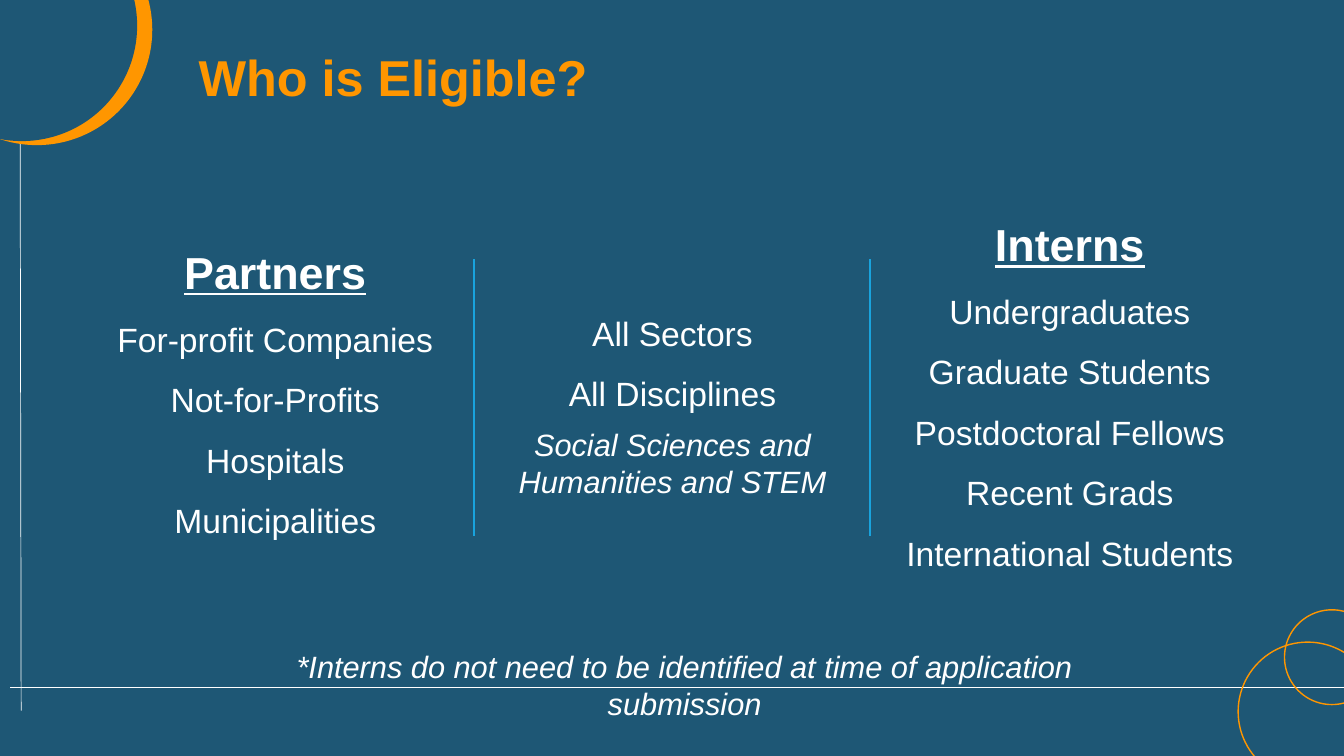
from dataclasses import dataclass

from lxml.etree import SubElement
from pptx import Presentation
from pptx.dml.color import RGBColor
from pptx.enum.shapes import MSO_CONNECTOR, MSO_SHAPE
from pptx.enum.text import MSO_ANCHOR, MSO_AUTO_SIZE, PP_ALIGN
from pptx.oxml.ns import qn
from pptx.util import Inches, Pt


@dataclass(frozen=True)
class Theme:
    font: str = "Arial"
    navy: str = "1E5775"
    orange: str = "FF9600"
    white: str = "FFFFFF"
    blue: str = "19A3DD"
    title: int = 36
    heading: int = 32
    item: int = 24
    note: int = 22


THEME = Theme()


@dataclass(frozen=True)
class Line:
    x1: float
    y1: float
    x2: float
    y2: float
    color: str
    width: float


@dataclass(frozen=True)
class Circle:
    x: float
    y: float
    size: float
    fill: str | None = None


@dataclass(frozen=True)
class Column:
    x: float
    y: float
    height: float
    items: tuple[str, ...]
    heading: str | None = None


COL_W = 3.94
LINES = (
    Line(0.1, 6.82, 13.33, 6.82, THEME.white, 0.5),
    Line(0.2, 1.36, 0.21, 7.05, THEME.white, 0.5),
    *(Line(x, 2.57, x, 5.32, THEME.blue, 1.5) for x in (4.7, 8.63)),
)
CIRCLES = (
    Circle(12.28, 6.37, 1.38),
    Circle(12.74, 6.05, 0.94),
    Circle(-0.78, -0.85, 2.29, THEME.orange),
    Circle(-0.93, -0.89, 2.29, THEME.navy),
)
PARTNERS = Column(0.76, 2.58, 2.36, (
    "For-profit Companies", "Not-for-Profits", "Hospitals", "Municipalities"), "Partners")
SCOPE = Column(4.7, 2.75, 2.36, ("All Sectors", "All Disciplines"))
INTERNS = Column(8.64, 2.42, 2.73, (
    "Undergraduates", "Graduate Students", "Postdoctoral Fellows",
    "Recent Grads", "International Students"), "Interns")


def add_line(s, line: Line) -> None:
    c = s.shapes.add_connector(
        MSO_CONNECTOR.STRAIGHT, *map(Inches, (line.x1, line.y1, line.x2, line.y2)))
    c.line.color.rgb = RGBColor.from_string(line.color)
    c.line.width = Pt(line.width)
    SubElement(c._element.spPr, qn("a:effectLst"))


def add_circle(s, circle: Circle) -> None:
    """Draw a filled disc, or an orange ring when there is no fill."""
    sp = s.shapes.add_shape(
        MSO_SHAPE.OVAL, *map(Inches, (circle.x, circle.y, circle.size, circle.size)))
    sp.shadow.inherit = False
    if circle.fill:
        sp.fill.solid()
        sp.fill.fore_color.rgb = RGBColor.from_string(circle.fill)
        sp.line.fill.background()
    else:
        sp.fill.background()
        sp.line.color.rgb = RGBColor.from_string(THEME.orange)
        sp.line.width = Pt(1)


def set_frame(sp, x: float, y: float, w: float, h: float, anchor=MSO_ANCHOR.MIDDLE):
    """Place a text shape and return its wrapped text frame."""
    sp.left, sp.top, sp.width, sp.height = map(Inches, (x, y, w, h))
    tf = sp.text_frame
    tf.word_wrap = True
    tf.auto_size = MSO_AUTO_SIZE.NONE
    tf.vertical_anchor = anchor
    return tf


def add_text(tf, text: str, *, size: int = THEME.item, color: str = THEME.white,
             bold: bool = False, italic: bool = False, underline: bool = False,
             align=PP_ALIGN.CENTER, spacing: float = 1.0, before: float = 0) -> None:
    p = tf.paragraphs[0] if not tf.text else tf.add_paragraph()
    p.alignment, p.line_spacing, p.space_before = align, spacing, Pt(before)
    pPr = p._p.get_or_add_pPr()
    pPr.set("marL", "0")
    pPr.set("indent", "0")
    SubElement(pPr, qn("a:buNone"))
    r = p.add_run()
    r.text = text
    font = r.font
    font.name, font.size = THEME.font, Pt(size)
    font.bold, font.italic, font.underline = bold, italic, underline
    font.color.rgb = RGBColor.from_string(color)


def fill_column(sp, column: Column):
    tf = set_frame(sp, column.x, column.y, COL_W, column.height)
    if column.heading:
        add_text(tf, column.heading, size=THEME.heading, bold=True, underline=True, spacing=1.5)
    for item in column.items:
        add_text(tf, item, spacing=1.5)
    return tf


def add_box(s):
    return s.shapes.add_textbox(0, 0, 0, 0)


def main() -> None:
    prs = Presentation()
    prs.slide_width, prs.slide_height = Inches(13.33), Inches(7.5)
    s = prs.slides.add_slide(prs.slide_layouts.get_by_name("Two Content"))
    s.background.fill.solid()
    s.background.fill.fore_color.rgb = RGBColor.from_string(THEME.navy)

    for line in LINES:
        add_line(s, line)
    for circle in CIRCLES:
        add_circle(s, circle)

    title, partners, interns = s.placeholders
    tf = set_frame(title, 1.87, 0.48, 4.47, 0.64, MSO_ANCHOR.TOP)
    add_text(tf, "Who is Eligible?", size=THEME.title, color=THEME.orange, bold=True,
             align=PP_ALIGN.LEFT, spacing=0.9)
    fill_column(partners, PARTNERS)
    fill_column(interns, INTERNS)

    tf = fill_column(add_box(s), SCOPE)
    add_text(tf, "Social Sciences and Humanities and STEM", size=THEME.note,
             italic=True, before=8.6)
    tf = set_frame(add_box(s), 2.54, 6.47, 8.5, 0.64)
    add_text(tf, "*Interns do not need to be identified at time of application submission",
             size=THEME.note, italic=True)
    prs.save("out.pptx")


if __name__ == "__main__":
    main()
